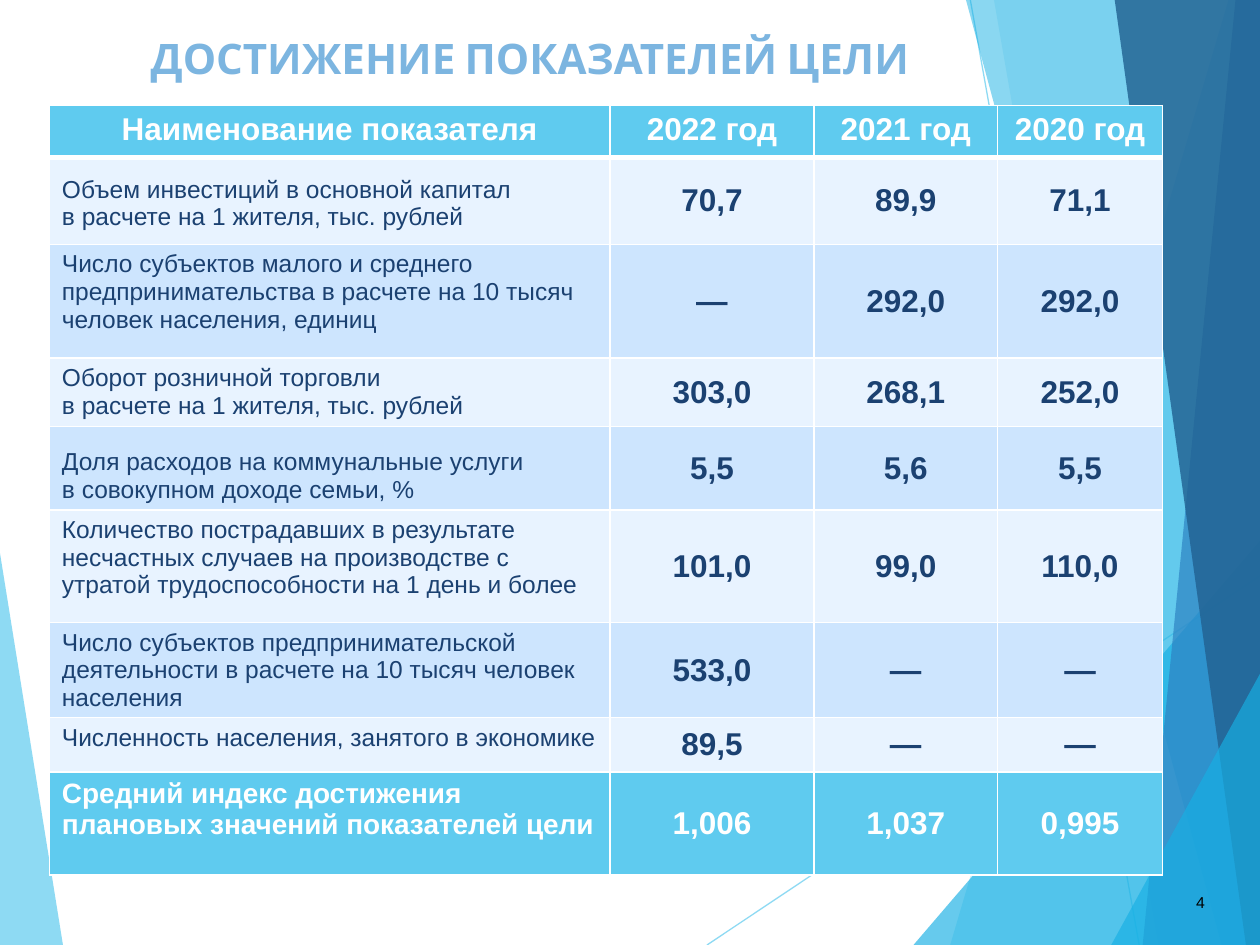
from pptx import Presentation
from pptx.dml.color import RGBColor
from pptx.enum.text import MSO_ANCHOR, PP_ALIGN
from pptx.oxml.ns import qn
from pptx.util import Pt
from lxml.etree import SubElement

WHITE = RGBColor(0xFF, 0xFF, 0xFF)
BLACK = RGBColor(0x00, 0x00, 0x00)
SKY = RGBColor(0x5F, 0xCB, 0xEF)
CYAN = RGBColor(0x17, 0xB0, 0xE4)
BLUE = RGBColor(0x2E, 0x83, 0xC3)
DEEP = RGBColor(0x22, 0x62, 0x92)
NAVY = RGBColor(0x1B, 0x41, 0x71)
HEAD = RGBColor(0x7C, 0xB5, 0xE0)
PALE = RGBColor(0xE8, 0xF3, 0xFF)
SOFT = RGBColor(0xCD, 0xE5, 0xFE)

WIDE, HIGH = 720, 540
FOOT, TOP = (WIDE, HIGH), (WIDE, 0)
RAYS = [((404, 540), (720, 329)), ((554.5, 0), (651, 540))]
WEDGES = [
    (SKY, 70, [(0, 316), (35.5, 540), (0, 540)]),
    (SKY, 36, [(702, 0), (543, 540), FOOT, TOP]),
    (SKY, 20, [(567.5, 0), (661.5, 540), FOOT, TOP]),
    (CYAN, 66, [(522.5, 540), (720, 309), FOOT]),
    (CYAN, 50, [(552, 0), (698.5, 540), FOOT, TOP]),
    (BLUE, 70, [(706.5, 0), (653, 540), FOOT, TOP]),
    (DEEP, 82, [(637, 0), (711.5, 540), FOOT, TOP]),
    (CYAN, 66, [(635, 540), (720, 385), FOOT]),
]

COLS = [320.4, 116.5, 105, 94.2]
ROWS = [
    (29.7, "Наименование показателя", "2022 год", "2021 год", "2020 год"),
    (49.7, "Объем инвестиций в основной капитал\n"
     "в расчете на 1 жителя, тыс. рублей", "70,7", "89,9", "71,1"),
    (64.9, "Число субъектов малого и среднего предпринимательства "
     "в расчете на 10 тысяч человек населения, единиц", "—", "292,0", "292,0"),
    (39.1, "Оборот розничной торговли\n"
     "в расчете на 1 жителя, тыс. рублей", "303,0", "268,1", "252,0"),
    (47.4, "Доля расходов на коммунальные услуги\n"
     "в совокупном доходе семьи, %", "5,5", "5,6", "5,5"),
    (64.3, "Количество пострадавших в результате несчастных случаев "
     "на производстве с утратой трудоспособности на 1 день и более",
     "101,0", "99,0", "110,0"),
    (54, "Число субъектов предпринимательской деятельности "
     "в расчете на 10 тысяч человек населения", "533,0", "—", "—"),
    (30.9, "Численность населения, занятого в экономике", "89,5", "—", "—"),
    (58.9, "Средний индекс достижения плановых значений показателей цели",
     "1,006", "1,037", "0,995"),
]
LAST = len(ROWS) - 1
INSETS = {1: 10.6, 4: 12.7}


def fade(fill, share):
    color = fill._xPr.find(qn("a:solidFill"))[0]
    SubElement(color, qn("a:alpha"), val=str(share * 1000))


def style(frame, size, color, bold=False, align=PP_ALIGN.LEFT, face="Arial"):
    for para in frame.paragraphs:
        para.alignment = align
        font = para.font
        font.name, font.size, font.bold = face, Pt(size), bold
        font.color.rgb = color


def draw_decor(slide, left, top):
    for start, end in RAYS:
        ends = [Pt(n) for x, y in (start, end) for n in (left + x, top + y)]
        ray = slide.shapes.add_connector(1, *ends)
        ray.line.width = Pt(0.75)
        ray.line.color.rgb = SKY
        fade(ray.line.fill, 70)
        SubElement(ray._element.spPr, qn("a:effectLst"))
    for color, share, points in WEDGES:
        spots = [(left + x, top + y) for x, y in points]
        pen = slide.shapes.build_freeform(*spots[0], scale=Pt(1))
        pen.add_line_segments(spots[1:], close=True)
        wedge = pen.convert_to_shape()
        wedge.shadow.inherit = False
        wedge.fill.solid()
        wedge.fill.fore_color.rgb = color
        fade(wedge.fill, share)
        wedge.line.fill.background()


def draw_title(slide, left, top, width, height):
    title = slide.shapes.title
    title.left, title.top = Pt(left), Pt(top)
    title.width, title.height = Pt(width), Pt(height)
    frame = title.text_frame
    frame.text = "ДОСТИЖЕНИЕ ПОКАЗАТЕЛЕЙ ЦЕЛИ"
    frame.vertical_anchor = MSO_ANCHOR.TOP
    style(frame, 24, HEAD, True, PP_ALIGN.CENTER, "Cabin")
    title.element.getparent().append(title.element)


def edge(cell, row):
    props = cell._tc.get_or_add_tcPr()
    thick = {"T": row == 1, "B": row == 0}
    for side in "LRTB":
        width = Pt(3 if thick.get(side) else 1)
        line = SubElement(props, qn(f"a:ln{side}"), w=str(width))
        fill = SubElement(line, qn("a:solidFill"))
        SubElement(fill, qn("a:srgbClr"), val=str(WHITE))


def fill_cell(cell, row, col, text):
    strong = row in (0, LAST)
    edge(cell, row)
    cell.fill.solid()
    cell.fill.fore_color.rgb = SKY if strong else PALE if row % 2 else SOFT
    label = col == 0 and row > 0
    cell.margin_left = cell.margin_right = Pt(7.2)
    cell.margin_top = Pt(INSETS.get(row, 3.6) if label else 3.6)
    cell.margin_bottom = Pt(3.6)
    top = label or row == 0
    cell.vertical_anchor = MSO_ANCHOR.TOP if top else MSO_ANCHOR.MIDDLE
    cell.text_frame.text = text
    size = 18 if not label else 16 if strong else 14
    align = PP_ALIGN.LEFT if label else PP_ALIGN.CENTER
    color = WHITE if strong else NAVY
    style(cell.text_frame, size, color, strong or not label, align)


def draw_table(slide, left, top):
    width, height = sum(COLS), sum(row[0] for row in ROWS)
    table = slide.shapes.add_table(
        len(ROWS), len(COLS), Pt(left), Pt(top), Pt(width), Pt(height)).table
    for col, size in enumerate(COLS):
        table.columns[col].width = Pt(size)
    for row, (size, *texts) in enumerate(ROWS):
        table.rows[row].height = Pt(size)
        for col, text in enumerate(texts):
            fill_cell(table.cell(row, col), row, col, text)


def draw_number(slide, left, top, width, height):
    box = slide.shapes.add_textbox(Pt(left), Pt(top), Pt(width), Pt(height))
    frame = box.text_frame
    frame.word_wrap = True
    frame.vertical_anchor = MSO_ANCHOR.MIDDLE
    frame.text = "4"
    style(frame, 9, BLACK, align=PP_ALIGN.RIGHT)


def main():
    deck = Presentation()
    deck.slide_width, deck.slide_height = Pt(WIDE), Pt(HIGH)
    slide = deck.slides.add_slide(deck.slide_layouts[5])
    draw_decor(slide, 0, 0)
    draw_title(slide, 36, 15, 533.5, 73.5)
    draw_table(slide, 28.2, 60.3)
    draw_number(slide, 666, 497, 29.5, 37.5)
    deck.save("out.pptx")


if __name__ == "__main__":
    main()
